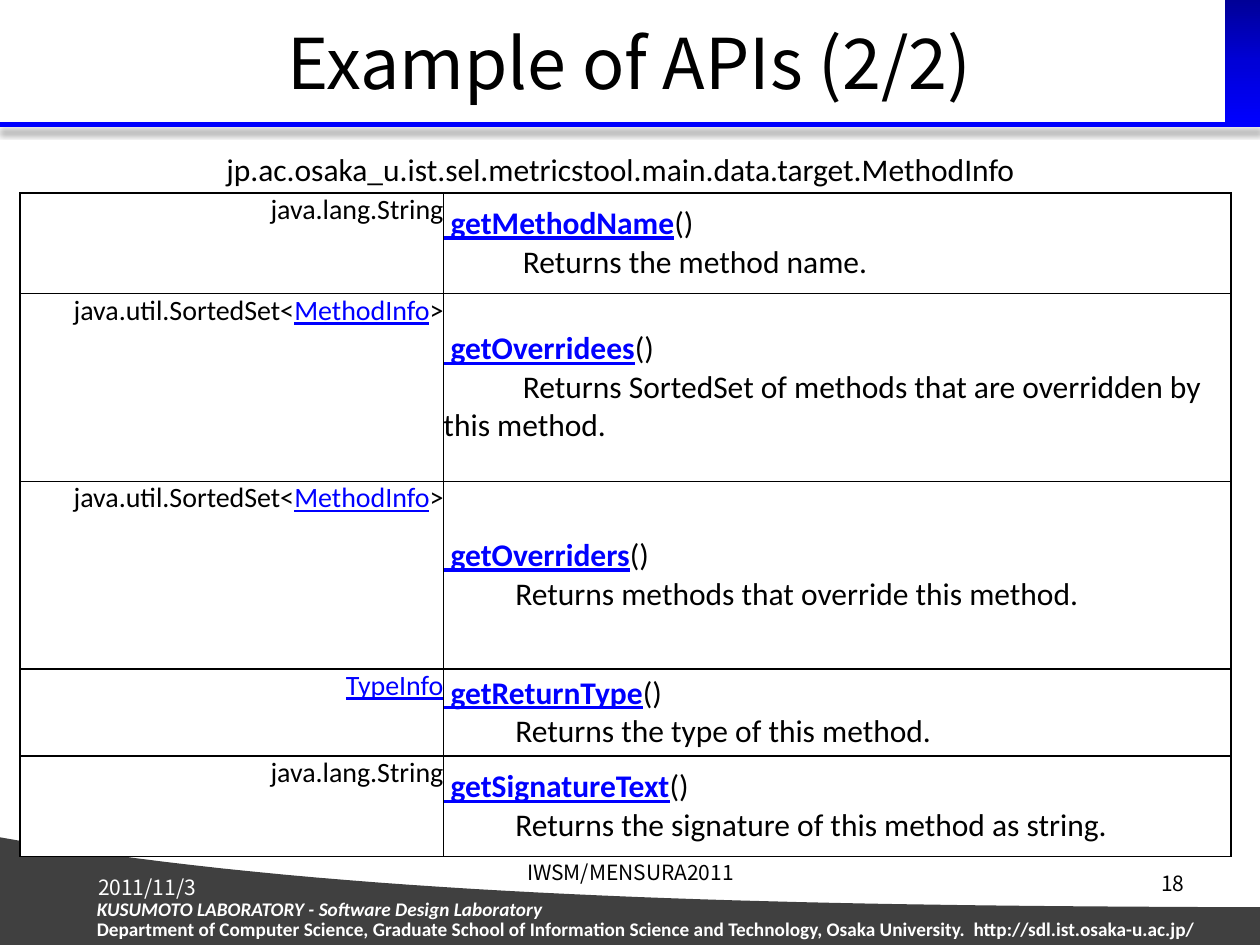
from dataclasses import dataclass
from typing import NamedTuple

from pptx import Presentation
from pptx.dml.color import RGBColor
from pptx.enum.shapes import MSO_CONNECTOR, MSO_SHAPE
from pptx.enum.text import MSO_ANCHOR, PP_ALIGN
from pptx.oxml import parse_xml
from pptx.oxml.ns import nsdecls
from pptx.util import Inches, Pt

COLORS = {"black": "000000", "white": "FFFFFF", "blue": "0000FF",
          "middle": "0000D7", "navy": "000097", "gray": "404040"}
LATIN, SANS = "Calibri", "Noto Sans CJK JP"
# The slide is a grid of 100 columns and 75 rows
WIDTH, HEIGHT = Inches(10), Inches(7.5)
COLUMN, ROW = WIDTH / 100, HEIGHT / 75


class Area(NamedTuple):
    column: float
    row: float
    columns: float
    rows: float

    def lengths(self) -> tuple:
        return (int(self.column * COLUMN), int(self.row * ROW),
                int(self.columns * COLUMN), int(self.rows * ROW))


@dataclass
class Label:
    text: str
    area: Area
    size: float
    font: str = SANS
    color: str = "black"
    align: PP_ALIGN = PP_ALIGN.LEFT
    anchor: MSO_ANCHOR = MSO_ANCHOR.TOP
    bold: bool = False
    italic: bool = False
    wrap: bool = True
    spacing: float | None = None


@dataclass
class Method:
    before: str
    link: str
    after: str
    name: str
    description: str
    rows: float
    indent: float = 5.7


BOTTOM_LABELS = [
    Label("Department of Computer Science, Graduate School of Information Science and "
          "Technology, Osaka University.  http://sdl.ist.osaka-u.ac.jp/",
          Area(6.7, 72.2, 93.3, 2.9), 11, LATIN, "white", anchor=MSO_ANCHOR.BOTTOM, bold=True),
    Label("KUSUMOTO LABORATORY - Software Design Laboratory", Area(6.7, 71.2, 37.9, 2.5),
          11, LATIN, "white", bold=True, italic=True, wrap=False, spacing=10),
    Label("2011/11/3", Area(6.8, 68.9, 18.5, 2.4), 12, color="white"),
    Label("IWSM/MENSURA2011", Area(25.2, 67.2, 49.7, 4.1), 12,
          align=PP_ALIGN.CENTER, anchor=MSO_ANCHOR.MIDDLE),
    Label("18", Area(76, 67.3, 19, 4.3), 12, align=PP_ALIGN.RIGHT, anchor=MSO_ANCHOR.BOTTOM),
]
CLASS_LABEL = Label("jp.ac.osaka_u.ist.sel.metricstool.main.data.target.MethodInfo",
                    Area(1.2, 11.4, 96.1, 4), 18, LATIN, align=PP_ALIGN.CENTER)
TITLE = Label("Example of APIs (2/2)", Area(3.1, 0.5, 93.7, 8.7), 40,
              align=PP_ALIGN.CENTER, anchor=MSO_ANCHOR.MIDDLE)

METHODS = [
    Method("java.lang.String", "", "", "getMethodName", "Returns the method name.", 8, 6.3),
    Method("java.util.SortedSet<", "MethodInfo", ">", "getOverridees",
           "Returns SortedSet of methods that are overridden by this method.", 14.9, 6.3),
    Method("java.util.SortedSet<", "MethodInfo", ">", "getOverriders",
           "Returns methods that override this method.", 14.9),
    Method("", "TypeInfo", "", "getReturnType", "Returns the type of this method.", 6.9),
    Method("java.lang.String", "", "", "getSignatureText",
           "Returns the signature of this method as string.", 8),
]
TABLE_COLUMNS = (33.6, 62.5)


def rgb(name: str) -> RGBColor:
    return RGBColor.from_string(COLORS[name])


def set_font(font, size: float, name: str = LATIN, color: str = "black") -> None:
    font.size, font.name = Pt(size), name
    font.color.rgb = rgb(color)


def write_label(box, label: Label) -> None:
    box.left, box.top, box.width, box.height = label.area.lengths()
    frame = box.text_frame
    frame.word_wrap, frame.vertical_anchor = label.wrap, label.anchor
    para = frame.paragraphs[0]
    para.text, para.alignment = label.text, label.align
    if label.spacing:
        para.line_spacing = Pt(label.spacing)
    set_font(para.font, label.size, label.font, label.color)
    para.font.bold, para.font.italic = label.bold, label.italic


def add_label(page, label: Label) -> None:
    write_label(page.shapes.add_textbox(*label.area.lengths()), label)


def add_span(para, text: str, link: bool = False, bold: bool = False) -> None:
    if not text:
        return
    span = para.add_run()
    span.text = text
    if link:
        span.font.color.rgb = rgb("blue")
        span.font.underline = True
    if bold:
        span.font.bold = True


def add_wave(page) -> None:
    """Dark footer whose upper edge is a cubic curve."""
    curve = [(-0.3, 66.4), (27.9, 71.5), (66.4, 71.9), (100.2, 72)]
    points = []
    for step in range(41):
        t = step / 40
        weights = ((1 - t) ** 3, 3 * t * (1 - t) ** 2, 3 * t * t * (1 - t), t ** 3)
        points.append(tuple(sum(w * point[axis] for w, point in zip(weights, curve))
                            for axis in (0, 1)))
    points += [(100.2, 75.1), (-0.3, 75.3)]
    places = [(x * COLUMN, y * ROW) for x, y in points]
    builder = page.shapes.build_freeform(*places[0])
    builder.add_line_segments(places[1:], close=True)
    wave = builder.convert_to_shape()
    wave.shadow.inherit = False
    wave.fill.solid()
    wave.fill.fore_color.rgb = rgb("gray")
    wave.line.fill.background()


def add_header(page) -> None:
    block = page.shapes.add_shape(MSO_SHAPE.RECTANGLE, *Area(97.2, 0, 2.8, 9.9).lengths())
    block.shadow.inherit = False
    block.line.fill.background()
    stops = "".join(f'<a:gs pos="{place}"><a:srgbClr val="{COLORS[name]}"/></a:gs>'
                    for place, name in ((0, "navy"), (50, "middle"), (100, "blue"))
                    ).replace('pos="50"', 'pos="50000"').replace('pos="100"', 'pos="100000"')
    block._element.spPr.find("{*}prstGeom").addnext(parse_xml(
        f'<a:gradFill {nsdecls("a")}><a:gsLst>{stops}</a:gsLst><a:lin ang="5400000"/></a:gradFill>'))

    level = int(9.9 * ROW)
    rule = page.shapes.add_connector(MSO_CONNECTOR.STRAIGHT, 0, level, WIDTH, level)
    rule.line.color.rgb, rule.line.width = rgb("blue"), Pt(3)
    rule._element.spPr.append(parse_xml(
        f'<a:effectLst {nsdecls("a")}><a:outerShdw blurRad="{Pt(4)}" dist="{Pt(3)}" dir="5400000" '
        f'rotWithShape="0"><a:srgbClr val="{COLORS["black"]}"><a:alpha val="40000"/></a:srgbClr>'
        '</a:outerShdw></a:effectLst>'))


def format_cell(cell, anchor: MSO_ANCHOR) -> None:
    cell.margin_left = cell.margin_right = cell.margin_top = cell.margin_bottom = 0
    cell.vertical_anchor = anchor
    cell.fill.solid()
    cell.fill.fore_color.rgb = rgb("white")
    for index, side in enumerate("LRTB"):
        cell._tc.get_or_add_tcPr().insert(index, parse_xml(
            f'<a:ln{side} {nsdecls("a")} w="{Pt(1)}"><a:solidFill>'
            f'<a:srgbClr val="{COLORS["black"]}"/></a:solidFill></a:ln{side}>'))


def add_methods(page, methods: list[Method]) -> None:
    area = Area(1.6, 15.3, sum(TABLE_COLUMNS), sum(method.rows for method in methods))
    table = page.shapes.add_table(len(methods), len(TABLE_COLUMNS), *area.lengths()).table
    table.first_row = table.horz_banding = False
    for column, columns in zip(table.columns, TABLE_COLUMNS):
        column.width = int(columns * COLUMN)
    for row, method in zip(table.rows, methods):
        row.height = int(method.rows * ROW)
        kind, summary = row.cells
        format_cell(kind, MSO_ANCHOR.TOP)
        format_cell(summary, MSO_ANCHOR.MIDDLE)

        # Return type
        para = kind.text_frame.paragraphs[0]
        para.alignment = PP_ALIGN.RIGHT
        add_span(para, method.before)
        add_span(para, method.link, link=True)
        add_span(para, method.after)
        set_font(para.font, 16)

        # Signature and indented description
        para = summary.text_frame.paragraphs[0]
        add_span(para, " " + method.name, link=True, bold=True)
        add_span(para, "()")
        set_font(para.font, 18)
        para = summary.text_frame.add_paragraph()
        para._p.get_or_add_pPr().set("indent", str(int(method.indent * COLUMN)))
        add_span(para, method.description)
        set_font(para.font, 18)


def main() -> None:
    deck = Presentation()
    deck.slide_width, deck.slide_height = WIDTH, HEIGHT
    page = deck.slides.add_slide(deck.slide_layouts[5])
    add_wave(page)
    add_header(page)
    write_label(page.shapes.title, TITLE)
    for label in BOTTOM_LABELS:
        add_label(page, label)
    add_methods(page, METHODS)
    add_label(page, CLASS_LABEL)
    deck.save("out.pptx")


if __name__ == "__main__":
    main()
